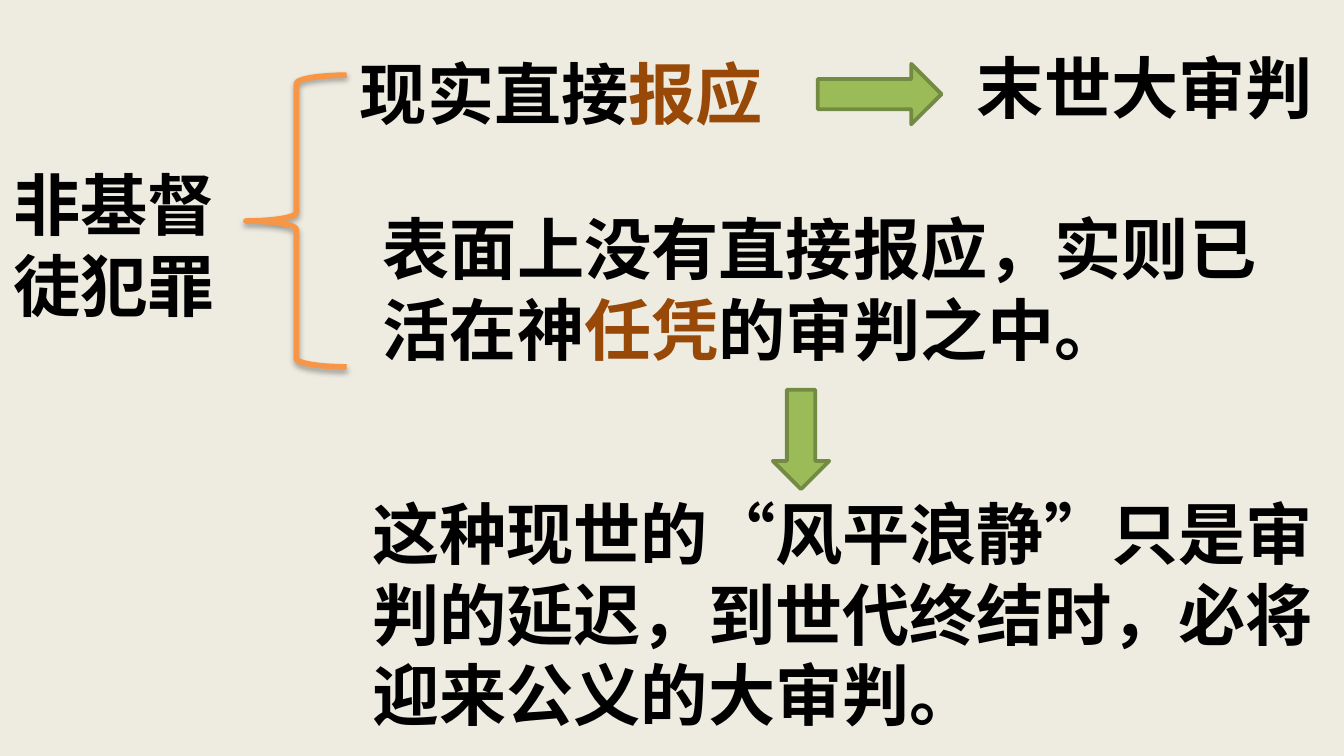
"""Builds the slide on retribution and final judgement."""
from pptx import Presentation
from pptx.dml.color import RGBColor
from pptx.enum.shapes import MSO_SHAPE as Shape
from pptx.enum.text import MSO_ANCHOR as Anchor, PP_ALIGN as Align
from pptx.oxml import parse_xml
from pptx.oxml.ns import nsdecls
from pptx.util import Inches, Pt

COLORS = {
    "background": "EEECE1",
    "text": "000000",
    "accent": "984807",
    "brace": "F79646",
    "arrow": "9BBB59",
    "arrow_edge": "738A42",
}


def color(name):
    return RGBColor.from_string(COLORS[name])


prs = Presentation()
prs.slide_width = Inches(10)
prs.slide_height = Inches(10 * 9 / 16)
slide = prs.slides.add_slide(prs.slide_layouts[6])
slide.background.fill.solid()
slide.background.fill.fore_color.rgb = color("background")

statements = [
    ((0, 0.98, 1.75, 1.67), "Calibri", [("非基督徒犯罪", "text")]),
    ((2.58, 0.15, 3.92, 1.08), "Calibri", [("现实直接", "text"), ("报应", "accent")]),
    ((2.75, 1.31, 7, 1.67), "Arial", [
        ("表面上没有直接报应，实则已活在神", "text"),
        ("任凭", "accent"),
        ("的审判之中。", "text"),
    ]),
    ((2.67, 3.73, 7.33, 1.67), "Arial", [
        ("这种现世的“风平浪静”只是审判的延迟，到世代终结时，必将迎来公义的大审判。", "text"),
    ]),
    ((7.17, 0.23, 2.83, 0.83), "Calibri", [("末世大审判", "text")]),
]
for place, typeface, parts in statements:
    frame = slide.shapes.add_textbox(*map(Inches, place)).text_frame
    frame.word_wrap = True
    frame.vertical_anchor = Anchor.MIDDLE
    paragraph = frame.paragraphs[0]
    paragraph.alignment = Align.LEFT
    for words, tone in parts:
        run = paragraph.add_run()
        run.text = words
        run.font.name = typeface
        run.font.size = Pt(36)
        run.font.bold = True
        run.font.color.rgb = color(tone)

brace = slide.shapes.add_shape(
    Shape.LEFT_BRACE, Inches(1.83), Inches(0.56), Inches(0.75), Inches(2.17))
brace.fill.background()
brace.line.color.rgb = color("brace")
brace.line.width = Pt(3)
brace.shadow.inherit = False
brace_effects = brace.element.spPr.find("{*}effectLst")
brace_effects.append(parse_xml(
    f'<a:outerShdw {nsdecls("a")} blurRad="{Pt(3.1)}" dist="{Pt(1.8)}" '
    'dir="5400000" rotWithShape="0"><a:srgbClr val="000000">'
    '<a:alpha val="35000"/></a:srgbClr></a:outerShdw>'))

for place, turn in [((5.75, 2.9, 0.42, 0.74), 0), ((6.32, 0.24, 0.45, 0.92), 270)]:
    arrow = slide.shapes.add_shape(Shape.DOWN_ARROW, *map(Inches, place))
    arrow.rotation = turn
    arrow.shadow.inherit = False
    arrow.fill.solid()
    arrow.fill.fore_color.rgb = color("arrow")
    arrow.line.color.rgb = color("arrow_edge")
    arrow.line.width = Pt(2)

prs.save("out.pptx")
